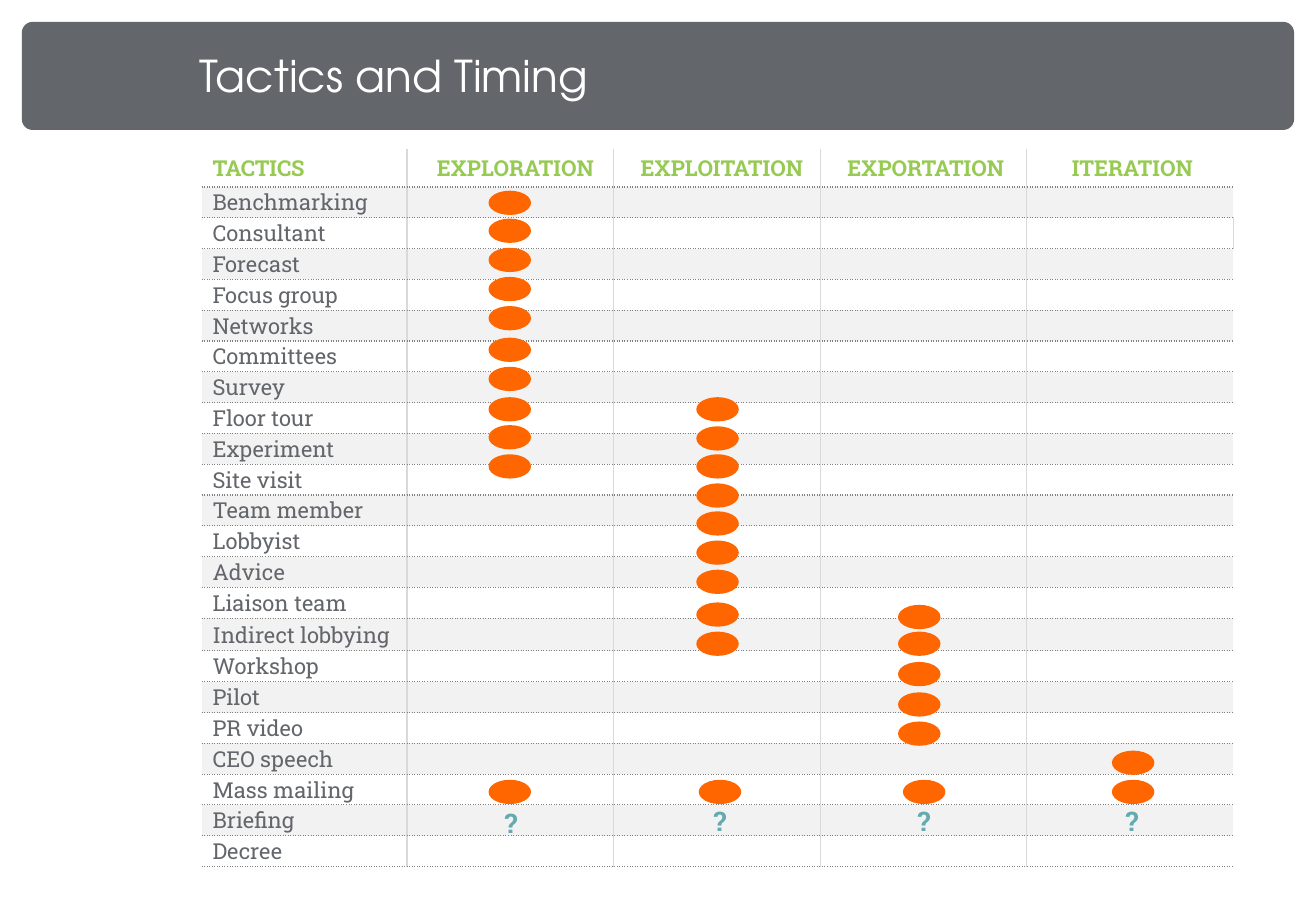
from dataclasses import dataclass

from lxml.etree import SubElement
from pptx import Presentation
from pptx.dml.color import RGBColor
from pptx.enum.shapes import MSO_SHAPE
from pptx.enum.text import MSO_ANCHOR, PP_ALIGN
from pptx.oxml.ns import qn
from pptx.util import Inches, Pt


@dataclass(frozen=True)
class Theme:
    heading_font: str = "TeX Gyre Adventor"
    body_font: str = "Roboto Slab"
    title_size: int = 26
    table_size: int = 13
    question_size: int = 16
    white: str = "FFFFFF"
    gray: str = "63666A"
    green: str = "97CA52"
    band: str = "F2F2F2"
    column_line: str = "D9D9D9"
    row_line: str = "808080"
    orange: str = "FF6600"
    teal: str = "65AAAE"


THEME = Theme()
NO_TABLE_STYLE = "{2D5ABB26-0587-4C30-8999-92F81FD0307C}"

HEADERS = ["TACTICS ", "EXPLORATION", "EXPLOITATION", "EXPORTATION ", "ITERATION "]
TACTICS = [
    "Benchmarking", "Consultant", "Forecast", "Focus group", "Networks", "Committees",
    "Survey", "Floor tour", "Experiment", "Site visit", "Team member", "Lobbyist",
    "Advice", "Liaison team", "Indirect lobbying", "Workshop", "Pilot", "PR video",
    "CEO speech", "Mass mailing", "Briefing", "Decree",
]
COLUMN_WIDTHS = [1.69, 1.7, 1.7, 1.7, 1.7]
HEADER_HEIGHT = 0.31
TALL_TACTIC, TALL_HEIGHT = "Indirect lobbying", 0.27
ROW_HEIGHT = 5.33 / (len(TACTICS) - 1)

# Left edge of each phase's dots, with their top edges
PHASE_DOTS = {
    4.02: [1.57, 1.8, 2.04, 2.28, 2.52, 2.78, 3.02, 3.27, 3.5, 3.74],
    5.73: [3.27, 3.51, 3.74, 3.98, 4.21, 4.45, 4.69, 4.96, 5.2],
    7.39: [4.98, 5.2, 5.45, 5.7, 5.94],
    9.15: [6.18],
}
MASS_MAILING_LEFTS, MASS_MAILING_TOP = [4.02, 5.75, 7.43, 9.15], 6.42
QUESTIONS = [(4.03, 6.58), (5.75, 6.56), (7.43, 6.56), (9.14, 6.56)]


def format_text(text_frame, font_name, size, color, bold=False):
    for paragraph in text_frame.paragraphs:
        for run in paragraph.runs:
            run.font.name = font_name
            run.font.size = Pt(size)
            run.font.bold = bold
            run.font.color.rgb = RGBColor.from_string(color)


def set_margins(target, left, top, right, bottom):
    target.margin_left, target.margin_top = Inches(left), Inches(top)
    target.margin_right, target.margin_bottom = Inches(right), Inches(bottom)


def add_filled_shape(slide, kind, left, top, width, height, color):
    shape = slide.shapes.add_shape(
        kind, Inches(left), Inches(top), Inches(width), Inches(height))
    shape.shadow.inherit = False
    shape.fill.solid()
    shape.fill.fore_color.rgb = RGBColor.from_string(color)
    shape.line.fill.background()
    return shape


def add_title(slide, text):
    banner = add_filled_shape(
        slide, MSO_SHAPE.ROUNDED_RECTANGLE, 0.18, 0.18, 10.47, 0.89, THEME.gray)
    banner.adjustments[0] = 0.1
    title = slide.shapes.add_textbox(Inches(1.64), Inches(0.25), Inches(8.9), Inches(0.73))
    text_frame = title.text_frame
    text_frame.word_wrap = True
    text_frame.vertical_anchor = MSO_ANCHOR.MIDDLE
    set_margins(text_frame, 0, 0, 0, 0)
    text_frame.text = text
    format_text(text_frame, THEME.heading_font, THEME.title_size, THEME.white)


def add_border(cell, side, color=None, dash="solid", width=0.75):
    """Draw one side (L, R, T or B); without a color the side stays empty."""
    properties = cell._tc.get_or_add_tcPr()
    line = SubElement(properties, qn(f"a:ln{side}"), w=str(Pt(width)))
    if color is None:
        SubElement(line, qn("a:noFill"))
        return
    fill = SubElement(line, qn("a:solidFill"))
    SubElement(fill, qn("a:srgbClr"), val=color)
    SubElement(line, qn("a:prstDash"), val=dash)


def add_cell_borders(cell, row, column):
    last_column = len(HEADERS) - 1
    add_border(cell, "L", THEME.column_line if column > 0 else None)
    if column < last_column:
        add_border(cell, "R", THEME.column_line)
    elif row == TACTICS.index("Consultant") + 1:
        add_border(cell, "R", THEME.column_line, width=0.5)
    else:
        add_border(cell, "R")
    add_border(cell, "T", THEME.row_line if row > 0 else None, "dot")
    add_border(cell, "B", THEME.row_line, "dot")


def fill_cell(cell, row, column, text):
    is_header = row == 0
    edge = 0.01 if is_header else 0
    set_margins(cell, 0.09, edge, edge, edge)
    cell.vertical_anchor = MSO_ANCHOR.MIDDLE
    add_cell_borders(cell, row, column)
    if row % 2:
        cell.fill.solid()
        cell.fill.fore_color.rgb = RGBColor.from_string(THEME.band)
    else:
        cell.fill.background()
    paragraph = cell.text_frame.paragraphs[0]
    if not text:
        SubElement(paragraph._p, qn("a:endParaRPr"), sz=str(THEME.table_size * 100))
        return
    paragraph.text = text
    paragraph.alignment = PP_ALIGN.CENTER if column > 0 else PP_ALIGN.LEFT
    color = THEME.green if is_header else THEME.gray
    format_text(cell.text_frame, THEME.body_font, THEME.table_size, color, is_header)


def add_tactics_table(slide):
    heights = [HEADER_HEIGHT] + [
        TALL_HEIGHT if tactic == TALL_TACTIC else ROW_HEIGHT for tactic in TACTICS]
    frame = slide.shapes.add_table(
        len(heights), len(HEADERS), Inches(1.66), Inches(1.23),
        Inches(sum(COLUMN_WIDTHS)), Inches(sum(heights)))
    table = frame.table
    table.horz_banding = False
    table.first_row = False
    table._tbl.tblPr.find(qn("a:tableStyleId")).text = NO_TABLE_STYLE
    for column, width in zip(table.columns, COLUMN_WIDTHS):
        column.width = Inches(width)
    for row, height in zip(table.rows, heights):
        row.height = Inches(height)
    blanks = [""] * (len(HEADERS) - 1)
    rows = [HEADERS] + [[tactic] + blanks for tactic in TACTICS]
    for row, texts in enumerate(rows):
        for column, text in enumerate(texts):
            fill_cell(table.cell(row, column), row, column, text)


def add_question(slide, left, top):
    box = slide.shapes.add_textbox(Inches(left), Inches(top), Inches(0.38), Inches(0.39))
    text_frame = box.text_frame
    set_margins(text_frame, 0.12, 0.06, 0.12, 0.06)
    text_frame.text = "?"
    format_text(text_frame, THEME.body_font, THEME.question_size, THEME.teal, True)


def add_dot(slide, left, top):
    add_filled_shape(slide, MSO_SHAPE.OVAL, left, top, 0.35, 0.2, THEME.orange)


def main():
    presentation = Presentation()
    presentation.slide_width = Inches(10.83)
    presentation.slide_height = Inches(7.5)
    slide = presentation.slides.add_slide(presentation.slide_layouts[6])
    add_title(slide, "Tactics and Timing")
    add_tactics_table(slide)
    for left, top in QUESTIONS:
        add_question(slide, left, top)
    for left, tops in PHASE_DOTS.items():
        for top in tops:
            add_dot(slide, left, top)
    for left in MASS_MAILING_LEFTS:
        add_dot(slide, left, MASS_MAILING_TOP)
    presentation.save("out.pptx")


if __name__ == "__main__":
    main()
